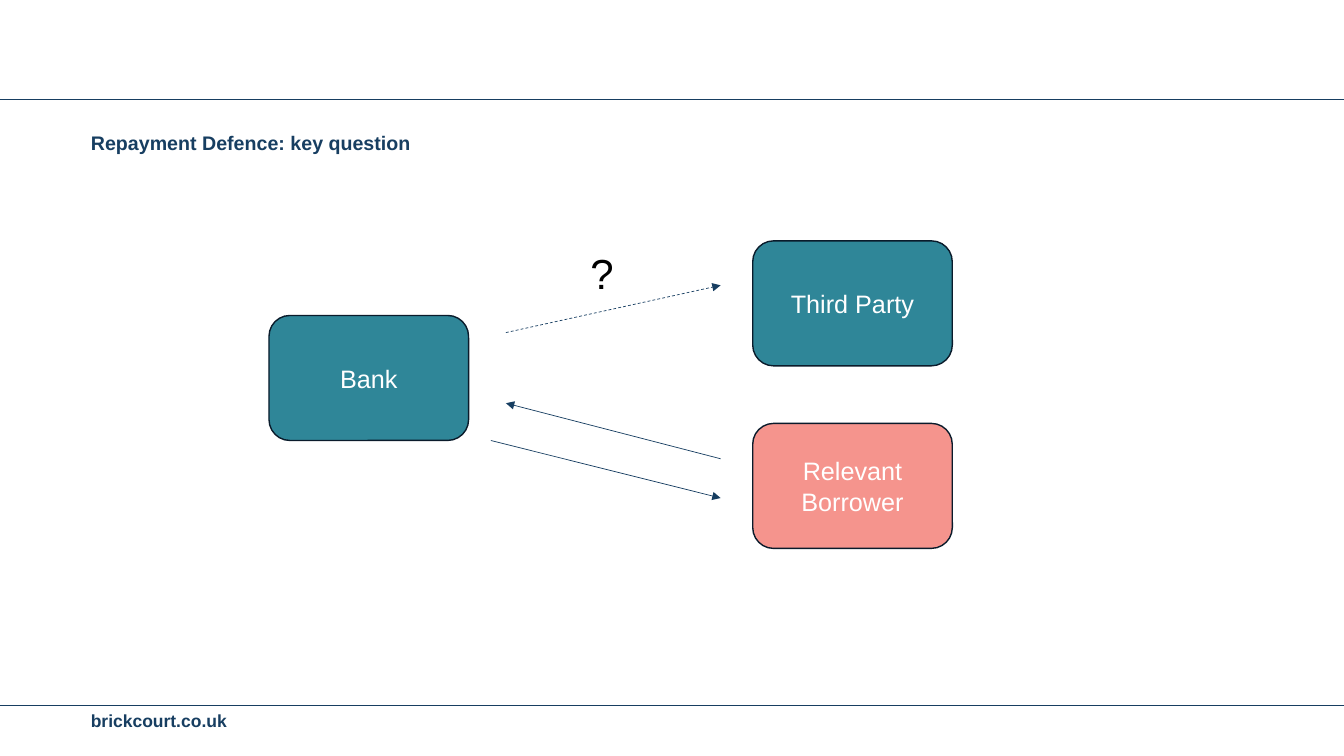
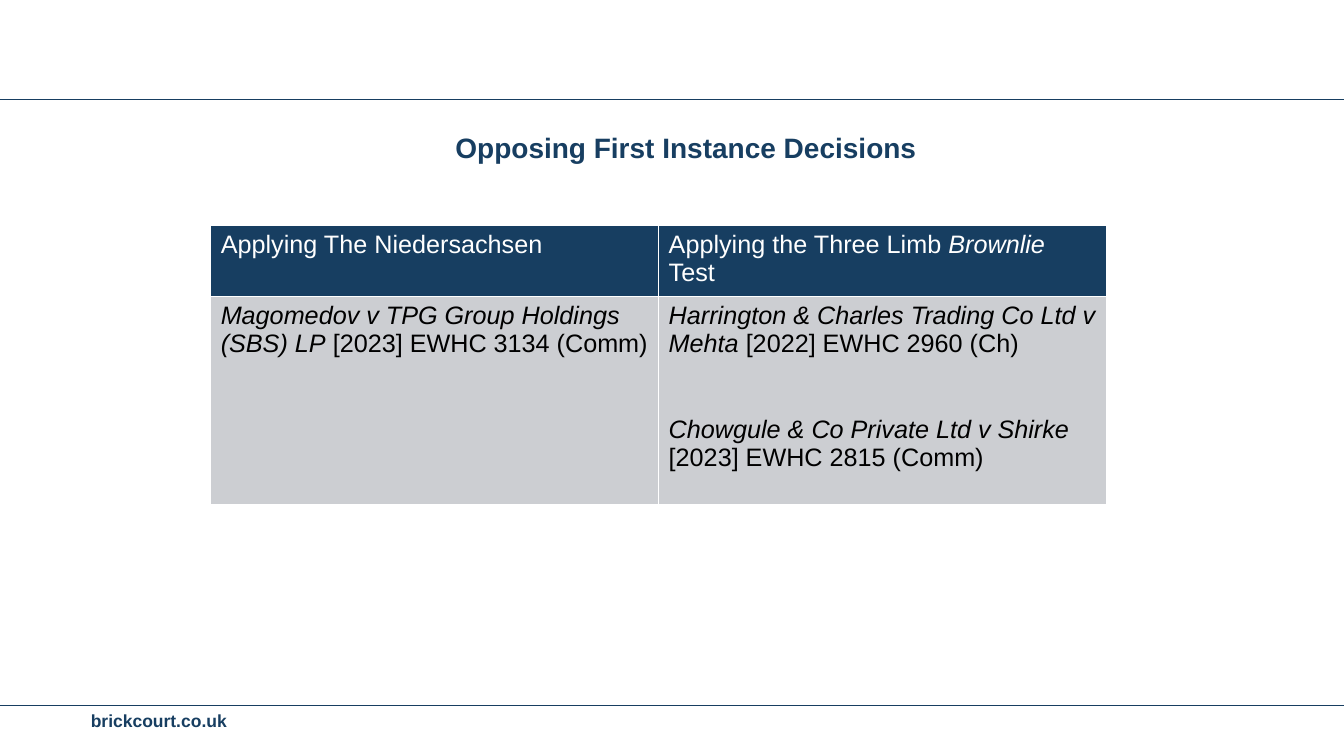
from pptx import Presentation
from pptx.dml.color import RGBColor as RGB
from pptx.enum.dml import MSO_LINE as Dash
from pptx.enum.shapes import MSO_CONNECTOR as Conn, MSO_SHAPE as Shape
from pptx.enum.text import MSO_ANCHOR as Anchor, PP_ALIGN as Align
from pptx.oxml import parse_xml
from pptx.oxml.ns import nsdecls
from pptx.util import Cm, Pt

NAVY = RGB(0x17, 0x3E, 0x61)
INK = RGB(0x0A, 0x1B, 0x2B)
TEAL = RGB(0x2F, 0x86, 0x98)
CORAL = RGB(0xF5, 0x94, 0x8D)
GREY = RGB(0xCC, 0xCE, 0xD2)
WHITE = RGB(0xFF, 0xFF, 0xFF)
BLACK = RGB(0, 0, 0)
WIDTH = 33.87

deck = Presentation()
deck.slide_width, deck.slide_height = Cm(WIDTH), Cm(19.05)


def style(par, size, color, bold=False, align=Align.LEFT):
    par.alignment = align
    font = par.font
    font.name, font.size, font.bold = "Arial", Pt(size), bold
    font.color.rgb = color


def rule(slide, start, end):
    line = slide.shapes.add_connector(Conn.STRAIGHT, *map(Cm, start + end))
    line.line.color.rgb = NAVY
    line.line.width = Pt(0.5)
    line._element.spPr.append(parse_xml(f"<a:effectLst {nsdecls('a')}/>"))
    return line


# Shared frame: rules, footer and title
pages = []
for text, size, align, wide in (
    ("Repayment Defence: key question", 14, Align.LEFT, 29.31),
    ("Opposing First Instance Decisions", 20, Align.CENTER, 30.25),
):
    slide = deck.slides.add_slide(deck.slide_layouts[5])
    for y in (2.51, 17.78):
        rule(slide, (0, y), (WIDTH, y))

    foot = slide.shapes.add_textbox(Cm(2.29), Cm(17.88), Cm(3.48), Cm(0.53))
    title = slide.shapes.title
    title.left, title.top = Cm(2.29), Cm(3.3)
    title.width, title.height = Cm(wide), Cm(1.2)
    for box in (foot, title):
        frame = box.text_frame
        frame.margin_left = frame.margin_top = 0
        frame.margin_right = frame.margin_bottom = 0
        frame.vertical_anchor = Anchor.TOP
    foot.text_frame.word_wrap = False
    title.text_frame.margin_right = Cm(0.25)

    foot.text_frame.text = "brickcourt.co.uk"
    style(foot.text_frame.paragraphs[0], 12.5, NAVY, True)
    title.text_frame.text = text
    style(title.text_frame.paragraphs[0], size, NAVY, True, align)
    pages.append(slide)
chart, cases = pages

# Parties
for name, x, y, fill in (
    ("Relevant Borrower", 18.97, 10.67, CORAL),
    ("Third Party", 18.97, 6.07, TEAL),
    ("Bank", 6.78, 7.95, TEAL),
):
    box = chart.shapes.add_shape(
        Shape.ROUNDED_RECTANGLE, Cm(x), Cm(y), Cm(5.03), Cm(3.15))
    box.shadow.inherit = False
    box.fill.solid()
    box.fill.fore_color.rgb = fill
    box.line.color.rgb = INK
    box.line.width = Pt(1)
    frame = box.text_frame
    frame.word_wrap = True
    frame.vertical_anchor = Anchor.MIDDLE
    frame.text = name
    style(frame.paragraphs[0], 18, WHITE, align=Align.CENTER)

# Arrows between the parties
for start, end, dash in (
    ((12.37, 11.1), (18.16, 12.55), None),
    ((18.16, 11.56), (12.75, 10.16), None),
    ((12.75, 8.38), (18.16, 7.19), Dash.DASH),
):
    arrow = rule(chart, start, end)
    arrow.line.dash_style = dash
    arrow.line._ln.append(
        parse_xml(f"<a:tailEnd {nsdecls('a')} type='triangle'/>"))

query = chart.shapes.add_textbox(Cm(14.63), Cm(6.12), Cm(3.53), Cm(1.55))
query.text_frame.word_wrap = True
query.text_frame.text = "?"
style(query.text_frame.paragraphs[0], 30, BLACK)

# Table of cases: cells hold paragraphs, paragraphs hold (text, italic) runs
rows = (
    (
        [[("Applying The Niedersachsen", False)]],
        [[("Applying the Three Limb ", False), ("Brownlie", True),
          (" Test", False)]],
    ),
    (
        [[("Magomedov v TPG Group Holdings (SBS) LP", True),
          (" [2023] EWHC 3134 (Comm)", False)]],
        [[("Harrington & Charles Trading Co Ltd v Mehta ", True),
          ("[2022] EWHC 2960 (Ch)", False)],
         [("Chowgule & Co Private Ltd v Shirke ", True),
          ("[2023] EWHC 2815 (Comm)", False)]],
    ),
)
table = cases.shapes.add_table(
    2, 2, Cm(5.31), Cm(5.69), Cm(22.58), Cm(6.9)).table
table.first_row = table.horz_banding = False
for col in table.columns:
    col.width = Cm(11.29)
looks = ((1.66, NAVY, WHITE), (5.24, GREY, BLACK))
for r, (tall, fill, color) in enumerate(looks):
    table.rows[r].height = Cm(tall)
    for c, pars in enumerate(rows[r]):
        cell = table.cell(r, c)
        props = cell._tc.get_or_add_tcPr()
        for side in "LRTB":
            props.append(parse_xml(
                f"<a:ln{side} {nsdecls('a')} w='12700'><a:solidFill>"
                f"<a:srgbClr val='{WHITE}'/></a:solidFill></a:ln{side}>"))
        cell.fill.solid()
        cell.fill.fore_color.rgb = fill
        frame = cell.text_frame
        for i, runs in enumerate(pars):
            par = frame.add_paragraph() if i else frame.paragraphs[0]
            if i:
                par.space_before = Pt(41)
            style(par, 18, color)
            for text, slant in runs:
                run = par.add_run()
                run.text = text
                run.font.italic = slant

deck.save("out.pptx")
